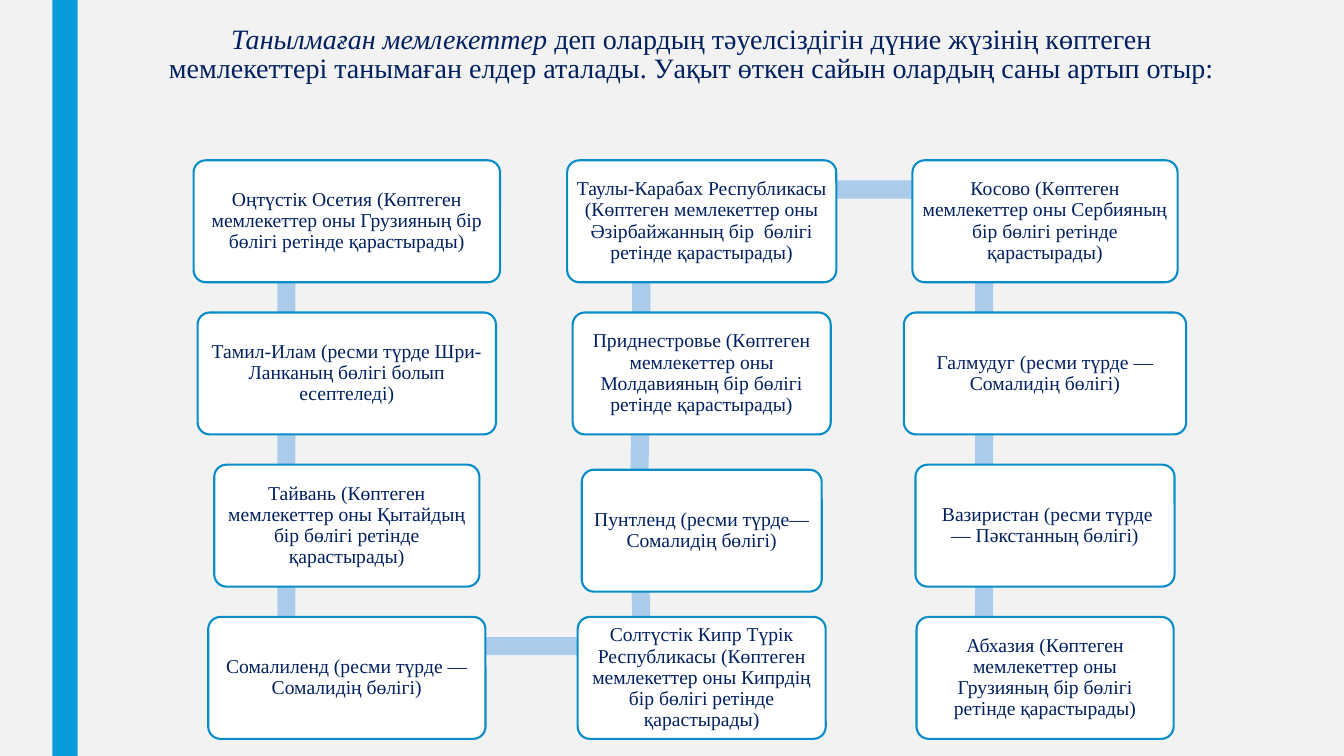
"""Builds a slide with a winding chain of twelve unrecognised states."""
from pptx import Presentation, util as u
from pptx.dml.color import RGBColor
from pptx.enum import shapes, text

COLORS = {"back": "F2F2F2", "stripe": "099BDD", "link": "ABCBEB",
          "box": "FFFFFF", "edge": "088DC9", "text": "002060"}
COLORS = {name: RGBColor.from_string(value) for name, value in COLORS.items()}
BOX_H, LINK_H, PITCH, TOP = 1.21, 0.18, 1.51, 1.59

COLUMNS = [
    (3.44, [
        (3.04, "Оңтүстік Осетия (Көптеген мемлекеттер оны Грузияның бір бөлігі ретінде қарастырады)"),
        (2.96, "Тамил-Илам (ресми түрде Шри-Ланканың бөлігі болып есептеледі)"),
        (2.63, "Тайвань (Көптеген мемлекеттер оны Қытайдың бір бөлігі ретінде қарастырады)"),
        (2.75, "Сомалиленд (ресми түрде — Сомалидің бөлігі)"),
    ]),
    (6.96, [
        (2.67, "Таулы-Карабах Республикасы (Көптеген мемлекеттер оны Әзірбайжанның бір  бөлігі ретінде қарастырады)"),
        (2.56, "Приднестровье (Көптеген мемлекеттер оны Молдавияның бір бөлігі ретінде қарастырады)"),
        (2.38, "Пунтленд (ресми түрде—Сомалидің бөлігі)"),
        (2.46, "Солтүстік Кипр Түрік Республикасы (Көптеген мемлекеттер оны Кипрдің бір бөлігі ретінде қарастырады)"),
    ]),
    (10.365, [
        (2.63, "Косово (Көптеген мемлекеттер оны Сербияның бір бөлігі ретінде қарастырады)"),
        (2.8, "Галмудуг (ресми түрде —Сомалидің бөлігі)"),
        (2.57, " Вазиристан (ресми түрде — Пәкстанның бөлігі)"),
        (2.55, "Абхазия (Көптеген мемлекеттер оны Грузияның бір бөлігі ретінде қарастырады)"),
    ]),
]
PUNTLAND_ROW, PUNTLAND_SHIFT = (1, 2), 0.05

LINKS = [(x, 2.64 + row * PITCH, 1.5, 90) for x in (2.84, 9.76) for row in range(3)]
LINKS += [(6.36, 2.64, 1.5, 270), (6.35, 4.17, 1.56, 270.8), (6.35, 5.68, 1.45, 268.8),
          (4.61, 6.41, 3.51, 0), (8.06, 1.88, 3.39, 0)]

prs = Presentation()
prs.slide_width, prs.slide_height = u.Inches(13.33), u.Inches(7.5)
s = prs.slides.add_slide(prs.slide_layouts[6])
s.background.fill.solid()
s.background.fill.fore_color.rgb = COLORS["back"]


def add_block(kind, left, top, width, height, fill):
    """Adds a flat filled shape without an outline."""
    sp = s.shapes.add_shape(kind, *map(u.Inches, (left, top, width, height)))
    sp.shadow.inherit = False
    sp.fill.solid()
    sp.fill.fore_color.rgb = COLORS[fill]
    sp.line.fill.background()
    return sp


def write(sp, runs, size, spacing, inset, anchor):
    """Writes one centred paragraph from (text, italic) pairs."""
    tf = sp.text_frame
    margins = {f"margin_{side}": u.Inches(inset) for side in ("left", "right", "top", "bottom")}
    for name, value in {"word_wrap": True, "vertical_anchor": anchor, **margins}.items():
        setattr(tf, name, value)
    p = tf.paragraphs[0]
    p.alignment, p.line_spacing = text.PP_ALIGN.CENTER, spacing
    for words, italic in runs:
        r = p.add_run()
        r.text = words
        for name, value in {"name": "Times New Roman", "size": u.Pt(size), "italic": italic}.items():
            setattr(r.font, name, value)
        r.font.color.rgb = COLORS["text"]


add_block(shapes.MSO_SHAPE.RECTANGLE, 0.52, 0, 0.25, 7.5, "stripe")

title = s.shapes.add_textbox(*map(u.Inches, (1.61, 0.2, 10.5, 1.62)))
write(title, [("Танылмаған мемлекеттер", True),
              (" деп олардың тәуелсіздігін дүние жүзінің көптеген мемлекеттері танымаған "
               "елдер аталады. Уақыт өткен сайын олардың саны артып отыр:", False)],
      20, 0.89, 0.05, text.MSO_ANCHOR.TOP)

for x, y, length, angle in LINKS:
    link = add_block(shapes.MSO_SHAPE.RECTANGLE, x - length / 2, y - LINK_H / 2, length, LINK_H, "link")
    link.rotation = angle

for col, (center, states) in enumerate(COLUMNS):
    for row, (width, words) in enumerate(states):
        top = TOP + row * PITCH + (PUNTLAND_SHIFT if (col, row) == PUNTLAND_ROW else 0)
        box = add_block(shapes.MSO_SHAPE.ROUNDED_RECTANGLE, center - width / 2, top, width, BOX_H, "box")
        box.adjustments[0] = 0.1
        box.line.color.rgb = COLORS["edge"]
        box.line.width = u.Pt(1.5)
        write(box, [(words, False)], 14, 0.9, 0.06, text.MSO_ANCHOR.MIDDLE)

prs.save("out.pptx")
